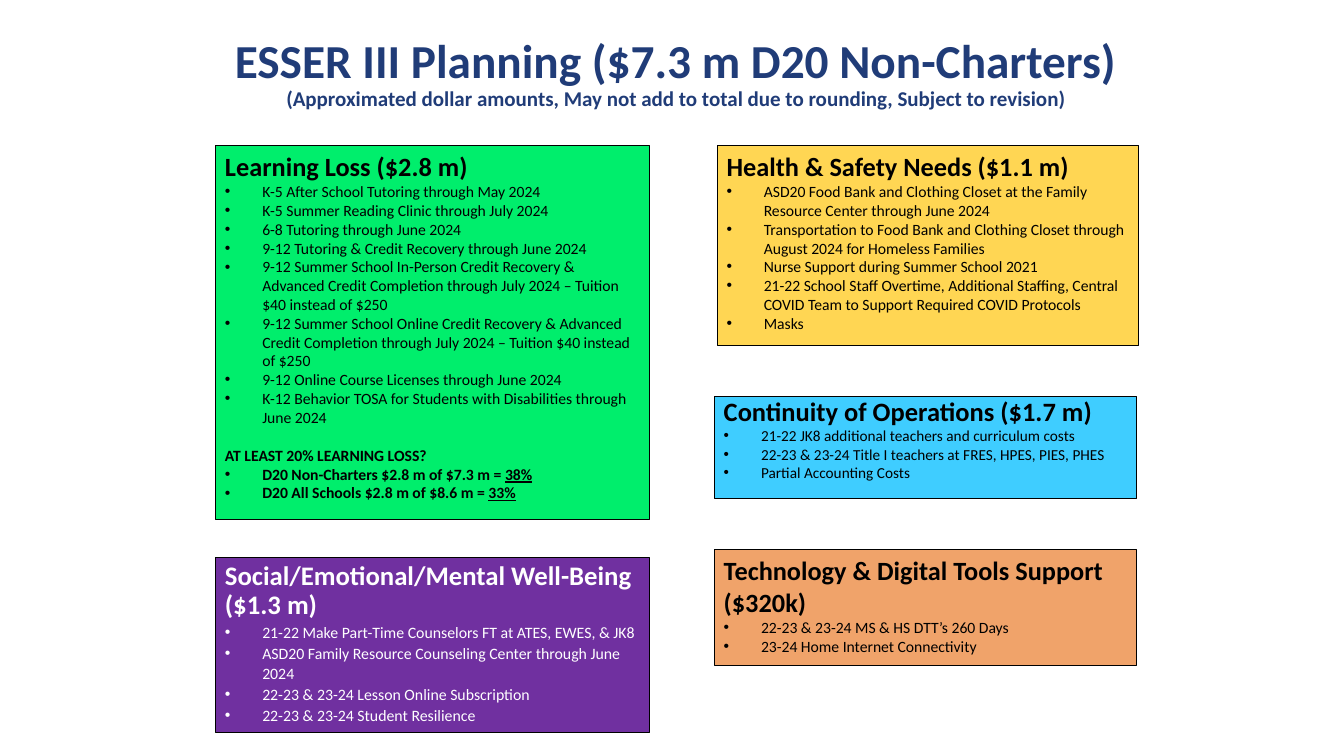
from lxml import etree
from pptx import Presentation
from pptx.dml.color import RGBColor
from pptx.enum.shapes import MSO_SHAPE
from pptx.enum.text import MSO_ANCHOR, MSO_AUTO_SIZE, PP_ALIGN
from pptx.oxml.ns import qn
from pptx.util import Cm, Pt

RECTANGLE = MSO_SHAPE.RECTANGLE
TOP, MIDDLE = MSO_ANCHOR.TOP, MSO_ANCHOR.MIDDLE
LEFT, CENTER = PP_ALIGN.LEFT, PP_ALIGN.CENTER
NO_AUTOFIT = MSO_AUTO_SIZE.NONE
FONT = "Calibri"
NAVY, BLACK, WHITE = "203C78", "000000", "FFFFFF"
HANGING = Cm(0.94)
LEFT_COLUMN, LEFT_WIDTH = 5.44, 10.92

LEARNING_LOSS = [
    "K-5 After School Tutoring through May 2024",
    "K-5 Summer Reading Clinic through July 2024",
    "6-8 Tutoring through June 2024",
    "9-12 Tutoring & Credit Recovery through June 2024",
    "9-12 Summer School In-Person Credit Recovery & Advanced Credit Completion "
    "through July 2024 – Tuition $40 instead of $250",
    "9-12 Summer School Online Credit Recovery & Advanced Credit Completion "
    "through July 2024 – Tuition $40 instead of $250",
    "9-12 Online Course Licenses through June 2024",
    "K-12 Behavior TOSA for Students with Disabilities through June 2024",
]
LOSS_SHARES = [
    ("D20 Non-Charters $2.8 m of $7.3 m = ", "38%"),
    ("D20 All Schools $2.8 m of $8.6 m = ", "33%"),
]
WELL_BEING = [
    "21-22 Make Part-Time Counselors FT at ATES, EWES, & JK8",
    "ASD20 Family Resource Counseling Center through June 2024",
    "22-23 & 23-24 Lesson Online Subscription",
    "22-23 & 23-24 Student Resilience",
]
HEALTH_SAFETY = [
    "ASD20 Food Bank and Clothing Closet at the Family Resource Center "
    "through June 2024",
    "Transportation to Food Bank and Clothing Closet through August 2024 "
    "for Homeless Families",
    "Nurse Support during Summer School 2021",
    "21-22 School Staff Overtime, Additional Staffing, Central COVID Team "
    "to Support Required COVID Protocols",
    "Masks",
]
CONTINUITY = [
    "21-22 JK8 additional teachers and curriculum costs",
    "22-23 & 23-24 Title I teachers at FRES, HPES, PIES, PHES",
    "Partial Accounting Costs",
]
TECHNOLOGY = [
    "22-23 & 23-24 MS & HS DTT’s 260 Days",
    "23-24 Home Internet Connectivity",
]


def color(value):
    """Turn a hex string into a colour."""
    return RGBColor.from_string(value)


def write(frame, text, *, size, ink=BLACK, bold=False, bullet=False, align=LEFT,
          spacing=1.0, before=0, underlined=""):
    """Add one paragraph, with an optional underlined ending."""
    first = frame.paragraphs[0]
    paragraph = frame.add_paragraph() if first.runs else first
    paragraph.alignment = align
    paragraph.line_spacing = spacing
    paragraph.space_before = Pt(before)
    paragraph.space_after = Pt(0)
    properties = paragraph._p.get_or_add_pPr()
    properties.set("marL", str(HANGING if bullet else 0))
    properties.set("indent", str(-HANGING if bullet else 0))
    if bullet:
        etree.SubElement(properties, qn("a:buFont")).set("typeface", "Arial")
        etree.SubElement(properties, qn("a:buChar")).set("char", "•")
    else:
        etree.SubElement(properties, qn("a:buNone"))
    for part, underline in ((text, False), (underlined, True)):
        if part:
            run = paragraph.add_run()
            run.text = part
            run.font.name = FONT
            run.font.size = Pt(size)
            run.font.bold = bold
            run.font.underline = underline
            run.font.color.rgb = color(ink)


def prepare(shape, box, anchor, margins):
    """Place a shape in its box and return its cleared text frame."""
    shape.left, shape.top, shape.width, shape.height = map(Cm, box)
    frame = shape.text_frame
    frame.word_wrap = True
    frame.auto_size = NO_AUTOFIT
    frame.vertical_anchor = anchor
    frame.margin_left = frame.margin_right = Cm(margins[0])
    frame.margin_top = frame.margin_bottom = Cm(margins[1])
    return frame


def add_heading(title, box):
    """Fill the slide title with its headline and qualifier."""
    frame = prepare(title, box, MIDDLE, (0.18, 0.08))
    for text, size in (
        ("ESSER III Planning ($7.3 m D20 Non-Charters)", 33.8),
        ("(Approximated dollar amounts, May not add to total due to rounding, "
         "Subject to revision)", 15),
    ):
        write(frame, text, size=size, ink=NAVY, bold=True, align=CENTER, spacing=0.9)


def add_panel(panel, box, fill, heading, items, *, ink=BLACK, heading_size=18.8,
              item_size=11.2, heading_spacing=1.0, item_spacing=1.0):
    """Format a spending panel and return its text frame."""
    frame = prepare(panel, box, TOP, (0.23, 0.13))
    panel.fill.solid()
    panel.fill.fore_color.rgb = color(fill)
    panel.line.color.rgb = color(BLACK)
    panel.line.width = Pt(0.75)
    write(frame, heading, size=heading_size, ink=ink, bold=True,
          spacing=heading_spacing)
    for item in items:
        write(frame, item, size=item_size, ink=ink, bullet=True, spacing=item_spacing)
    return frame


def add_rectangle(slide, box):
    """Add a shadowless rectangle for a panel."""
    rectangle = slide.shapes.add_shape(RECTANGLE, *map(Cm, box))
    rectangle.shadow.inherit = False
    return rectangle


def build_planning_slide(presentation):
    """Build the planning slide with its heading and five panels."""
    slide = presentation.slides.add_slide(presentation.slide_layouts[1])
    add_heading(slide.shapes.title, (5.23, 0.58, 23.62, 2.59))

    loss = add_panel(slide.placeholders[1], (LEFT_COLUMN, 3.66, LEFT_WIDTH, 9.42),
                     "00EE6C", "Learning Loss ($2.8 m)", LEARNING_LOSS)
    write(loss, "AT LEAST 20% LEARNING LOSS?", size=11.2, bold=True, before=13.7)
    for share, percent in LOSS_SHARES:
        write(loss, share, size=11.2, bold=True, bullet=True, underlined=percent)

    panels = [
        ((LEFT_COLUMN, 14.05, LEFT_WIDTH, 4.42), "7030A0",
         "Social/Emotional/Mental Well-Being ($1.3 m)", WELL_BEING,
         {"ink": WHITE, "heading_size": 19.1, "item_size": 11.3,
          "heading_spacing": 0.9, "item_spacing": 1.1}),
        ((18.08, 3.66, 10.62, 5.05), "FFD653",
         "Health & Safety Needs ($1.1 m)", HEALTH_SAFETY, {}),
        ((18.01, 9.98, 10.64, 2.59), "3FCDFF",
         "Continuity of Operations ($1.7 m)", CONTINUITY,
         {"heading_size": 18.9, "item_size": 10.9, "heading_spacing": 0.8}),
        ((18.01, 13.84, 10.64, 2.92), "F0A36A",
         "Technology & Digital Tools Support ($320k)", TECHNOLOGY, {}),
    ]
    for box, fill, heading, items, style in panels:
        add_panel(add_rectangle(slide, box), box, fill, heading, items, **style)


def main():
    """Create and save the presentation."""
    presentation = Presentation()
    presentation.slide_width = Cm(33.87)
    presentation.slide_height = Cm(19.05)
    build_planning_slide(presentation)
    presentation.save("out.pptx")


if __name__ == "__main__":
    main()
